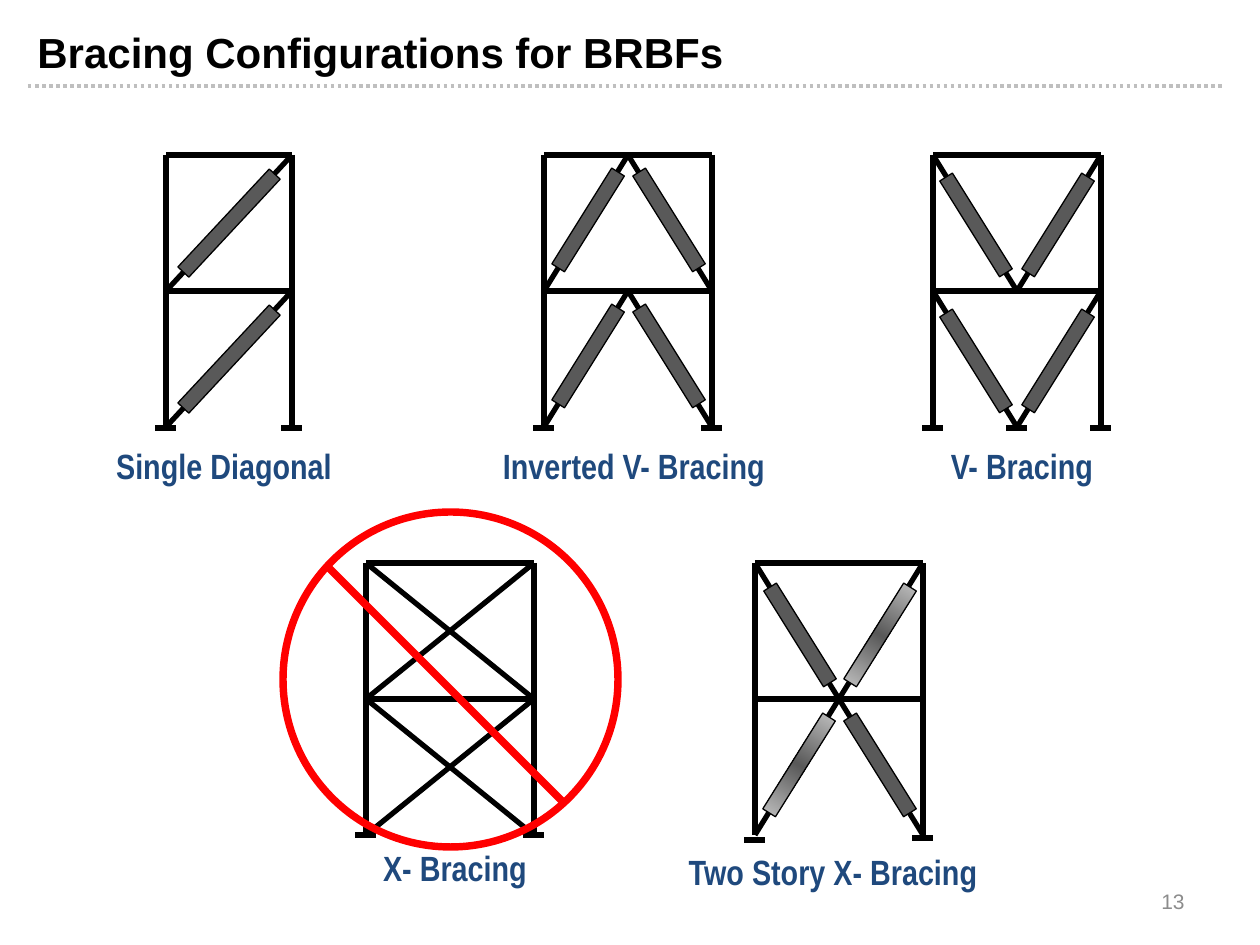
import math

import pptx
import pptx.dml.color
import pptx.enum.dml
import pptx.enum.shapes
import pptx.enum.text
import pptx.oxml.ns
import pptx.util
from lxml import etree

PX = 7257  # EMU per px, 126 px to the inch
STORY = 136
PLATE = 21
BLACK, RED, STEEL, LIGHT = "000000", "FF0000", "595959", "C0C0C0"


def rgb(hex_code):
    return pptx.dml.color.RGBColor.from_string(hex_code)


def strut(x0, y0, x1, y1, color=BLACK, weight=3):
    """Draw a straight member without a shadow, ends in px."""
    member = slide.shapes.add_connector(
        pptx.enum.shapes.MSO_CONNECTOR.STRAIGHT,
        *(round(v * PX) for v in (x0, y0, x1, y1)))
    member.line.color.rgb = rgb(color)
    member.line.width = pptx.util.Pt(weight)
    etree.SubElement(member._element.spPr, pptx.oxml.ns.qn("a:effectLst"))
    return member


prs = pptx.Presentation()
prs.slide_width = pptx.util.Inches(10)
prs.slide_height = pptx.util.Inches(7.5)
slide = prs.slides.add_slide(prs.slide_layouts[6])

title_rule = strut(28, 86, 1225, 86, "BFBFBF", 2)
title_rule.line.dash_style = pptx.enum.dml.MSO_LINE.ROUND_DOT

# Braces: start and end as (fraction of bay width, level from the top),
# then the shift of the sleeve from the middle of the brace in px, and
# whether the sleeve is shaded along its length.
# Plates: (fraction of bay width, drop below the column foot in px).
frames = [
    dict(left=366, top=563, width=168, sleeve=0, plates=[(0, 0), (1, 0)],
         braces=[(a, level + 1, 1 - a, level, 0, 0, False)
                 for level in (0, 1) for a in (0, 1)]),
    dict(left=166, top=155, width=126, sleeve=134, plates=[(0, 1), (1, 1)],
         braces=[(0, level + 1, 1, level, 0, 0, False) for level in (0, 1)]),
    dict(left=544, top=155, width=168, sleeve=113, plates=[(0, 1), (1, 1)],
         braces=[(a, level + 1, 0.5, level, dx, -3, False)
                 for level in (0, 1) for a, dx in ((0, 2), (1, -1))]),
    dict(left=933, top=155, width=168, sleeve=113,
         plates=[(0, 1), (0.5, 1), (1, 1)],
         braces=[(a, level, 0.5, level + 1, dx, 2, False)
                 for level in (0, 1) for a, dx in ((0, 1), (1, -1))]),
    dict(left=755, top=563, width=168, sleeve=113, plates=[(0, 5), (1, 3)],
         braces=[(0.5, 1, 0, 0, 3, 4, False), (0.5, 1, 1, 0, -1, 4, True),
                 (0.5, 1, 0, 2, 2, -2, True), (0.5, 1, 1, 2, -1, -2, False)]),
]

for frame in frames:
    left, top, width = frame["left"], frame["top"], frame["width"]
    for level in (0, 1):
        beam = top + level * STORY
        strut(left, beam, left + width, beam)
        for column in (left, left + width):
            strut(column, beam, column, beam + STORY)
    for fraction, drop in frame["plates"]:
        center, foot = left + fraction * width, top + 2 * STORY + drop
        strut(center - PLATE / 2, foot, center + PLATE / 2, foot)

    for a, from_level, b, to_level, dx, dy, shaded in frame["braces"]:
        x0, y0 = left + a * width, top + from_level * STORY
        x1, y1 = left + b * width, top + to_level * STORY
        strut(x0, y0, x1, y1)
        length, depth = frame["sleeve"], 15
        if not length:
            continue
        sleeve = slide.shapes.add_shape(
            pptx.enum.shapes.MSO_SHAPE.RECTANGLE,
            round(((x0 + x1 - length) / 2 + dx) * PX),
            round(((y0 + y1 - depth) / 2 + dy) * PX),
            length * PX, depth * PX)
        sleeve.rotation = round(math.degrees(math.atan2(y1 - y0, x1 - x0))) % 180
        sleeve.shadow.inherit = False
        sleeve.line.color.rgb = rgb(BLACK)
        sleeve.line.width = pptx.util.Pt(0.75)
        if shaded:
            sleeve.fill.gradient()
            sleeve.fill.gradient_angle = 0
            for stop in sleeve.fill.gradient_stops:
                stop.color.rgb = rgb(LIGHT)
            first_stop = sleeve._element.spPr.find(".//" + pptx.oxml.ns.qn("a:gs"))
            middle = etree.Element(pptx.oxml.ns.qn("a:gs"), pos="50000")
            etree.SubElement(middle, pptx.oxml.ns.qn("a:srgbClr"), val=STEEL)
            first_stop.addnext(middle)
        else:
            sleeve.fill.solid()
            sleeve.fill.fore_color.rgb = rgb(STEEL)

prohibition = slide.shapes.add_shape(
    pptx.enum.shapes.MSO_SHAPE.OVAL, 283 * PX, 512 * PX, 335 * PX, 335 * PX)
prohibition.shadow.inherit = False
prohibition.fill.background()
prohibition.line.color.rgb = rgb(RED)
prohibition.line.width = pptx.util.Pt(4.25)
strut(328, 567, 564, 803, RED, 4.25)

align = pptx.enum.text.PP_ALIGN
anchor = pptx.enum.text.MSO_ANCHOR
caption = dict(size=pptx.util.Pt(20), name="Arial Narrow", bold=True)
heading = dict(size=pptx.util.Pt(24), name="Arial", bold=True)
numbering = dict(size=pptx.util.Pt(12), name="Arial", bold=False)
captions = [
    ("Single Diagonal", 51, 438),
    ("Inverted V- Bracing", 461, 438),
    ("V- Bracing", 849, 438),
    ("X- Bracing", 282, 840),
    ("Two Story X- Bracing", 660, 844),
]
texts = [(words, (x, y, 346, 54), caption, "1F497D", align.CENTER, anchor.TOP, 2)
         for words, x, y in captions]
texts += [
    ("Bracing Configurations for BRBFs", (25, 20, 1131, 56), heading, BLACK,
     align.LEFT, anchor.TOP, 3),
    ("13", (903, 876, 294, 50), numbering, "8C8C8C",
     align.RIGHT, anchor.MIDDLE, 0),
]
for words, place, font_format, color, alignment, vertical, before in texts:
    text_frame = slide.shapes.add_textbox(*(v * PX for v in place)).text_frame
    text_frame.word_wrap = True
    text_frame.vertical_anchor = vertical
    paragraph = text_frame.paragraphs[0]
    paragraph.alignment = alignment
    paragraph.space_before = pptx.util.Pt(before)
    run = paragraph.add_run()
    run.text = words
    run.font.color.rgb = rgb(color)
    for attribute, value in font_format.items():
        setattr(run.font, attribute, value)

prs.save("out.pptx")
